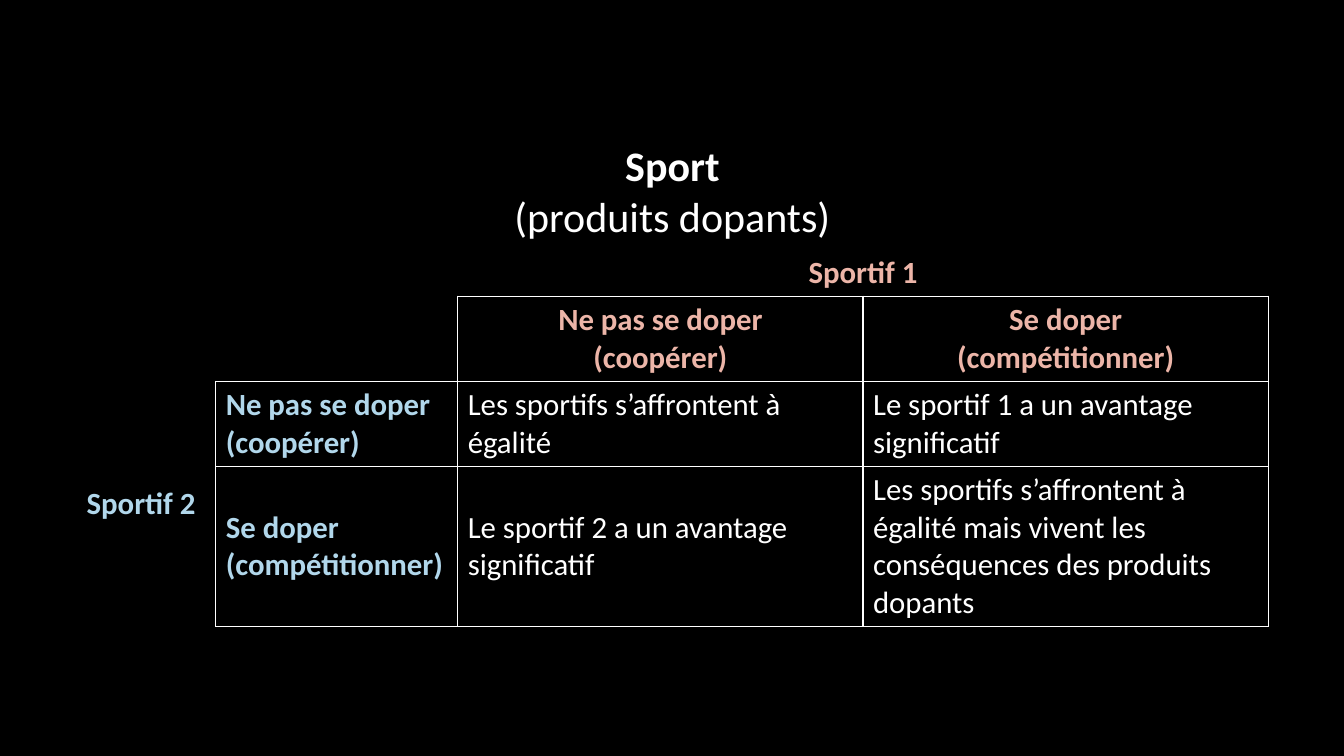
from dataclasses import dataclass

from lxml import etree
from pptx import Presentation
from pptx.dml.color import RGBColor
from pptx.enum.text import MSO_ANCHOR, PP_ALIGN
from pptx.oxml.ns import qn
from pptx.util import Inches, Pt

MIDDLE = MSO_ANCHOR.MIDDLE
LEFT, CENTER = PP_ALIGN.LEFT, PP_ALIGN.CENTER

FONT = "Calibri"
BLACK, WHITE = "000000", "FFFFFF"
SALMON, SKY = "ECB5A8", "B1D7EB"
COLUMN_WIDTHS = (1.38, 2.4, 4.02, 4.02)
ROW_HEIGHTS = (1.11, 0.47, 0.84, 0.84, 1.59)
BORDER_WIDTH = Pt(1)


@dataclass(frozen=True)
class Line:
    text: str
    bold: bool = True


@dataclass(frozen=True)
class Entry:
    row: int
    column: int
    lines: tuple[Line, ...]
    color: str = WHITE
    align: PP_ALIGN = LEFT
    size: int = 22
    row_span: int = 1
    column_span: int = 1


COOPERATE = (Line("Ne pas se doper"), Line("(coopérer)"))
COMPETE = (Line("Se doper"), Line("(compétitionner)"))

ENTRIES = (
    # Title and players
    Entry(0, 0, (Line("Sport"), Line("(produits dopants)", False)),
          align=CENTER, size=30, column_span=4),
    Entry(1, 2, (Line("Sportif 1"),), SALMON, CENTER, column_span=2),
    Entry(3, 0, (Line("Sportif 2"),), SKY, row_span=2),
    # Choices
    Entry(2, 2, COOPERATE, SALMON, CENTER),
    Entry(2, 3, COMPETE, SALMON, CENTER),
    Entry(3, 1, COOPERATE, SKY),
    Entry(4, 1, COMPETE, SKY),
    # Outcomes
    Entry(3, 2, (Line("Les sportifs s’affrontent à égalité", False),)),
    Entry(3, 3, (Line("Le sportif 1 a un avantage significatif", False),)),
    Entry(4, 2, (Line("Le sportif 2 a un avantage significatif", False),)),
    Entry(4, 3, (Line("Les sportifs s’affrontent à égalité mais vivent les "
                      "conséquences des produits dopants", False),)),
)


def rgb(value: str) -> RGBColor:
    return RGBColor.from_string(value)


def is_boxed(row: int, column: int) -> bool:
    """Choices and outcomes are framed; the corner between them is not."""
    in_matrix = 2 <= row < len(ROW_HEIGHTS) and 1 <= column < len(COLUMN_WIDTHS)
    return in_matrix and (row, column) != (2, 1)


def set_borders(cell, row: int, column: int) -> None:
    neighbours = {
        "a:lnL": (row, column - 1),
        "a:lnR": (row, column + 1),
        "a:lnT": (row - 1, column),
        "a:lnB": (row + 1, column),
    }
    properties = cell._tc.get_or_add_tcPr()
    for tag, neighbour in neighbours.items():
        border = etree.SubElement(properties, qn(tag), w=str(BORDER_WIDTH))
        if is_boxed(row, column) or is_boxed(*neighbour):
            fill = etree.SubElement(border, qn("a:solidFill"))
            etree.SubElement(fill, qn("a:srgbClr"), val=WHITE)
        else:
            etree.SubElement(border, qn("a:noFill"))


def write_entry(table, entry: Entry) -> None:
    cell = table.cell(entry.row, entry.column)
    if entry.row_span > 1 or entry.column_span > 1:
        cell.merge(table.cell(entry.row + entry.row_span - 1,
                              entry.column + entry.column_span - 1))
    cell.vertical_anchor = MIDDLE
    frame = cell.text_frame
    for index, line in enumerate(entry.lines):
        paragraph = frame.add_paragraph() if index else frame.paragraphs[0]
        paragraph.alignment = entry.align
        run = paragraph.add_run()
        run.text = line.text
        run.font.name = FONT
        run.font.size = Pt(entry.size)
        run.font.bold = line.bold
        run.font.color.rgb = rgb(entry.color)


def main() -> None:
    presentation = Presentation()
    presentation.slide_width = Inches(13.33)
    presentation.slide_height = Inches(7.5)
    slide = presentation.slides.add_slide(presentation.slide_layouts[6])
    background = slide.background.fill
    background.solid()
    background.fore_color.rgb = rgb(BLACK)

    # Payoff matrix
    matrix = slide.shapes.add_table(
        len(ROW_HEIGHTS), len(COLUMN_WIDTHS), Inches(0.76), Inches(1.35),
        Inches(sum(COLUMN_WIDTHS)), Inches(sum(ROW_HEIGHTS))).table
    matrix.first_row = False
    matrix.horz_banding = False
    for column, width in zip(matrix.columns, COLUMN_WIDTHS):
        column.width = Inches(width)
    for row, height in zip(matrix.rows, ROW_HEIGHTS):
        row.height = Inches(height)

    # Frames, then wording
    for row in range(len(ROW_HEIGHTS)):
        for column in range(len(COLUMN_WIDTHS)):
            cell = matrix.cell(row, column)
            set_borders(cell, row, column)
            cell.fill.background()
    for entry in ENTRIES:
        write_entry(matrix, entry)

    presentation.save("out.pptx")


if __name__ == "__main__":
    main()
